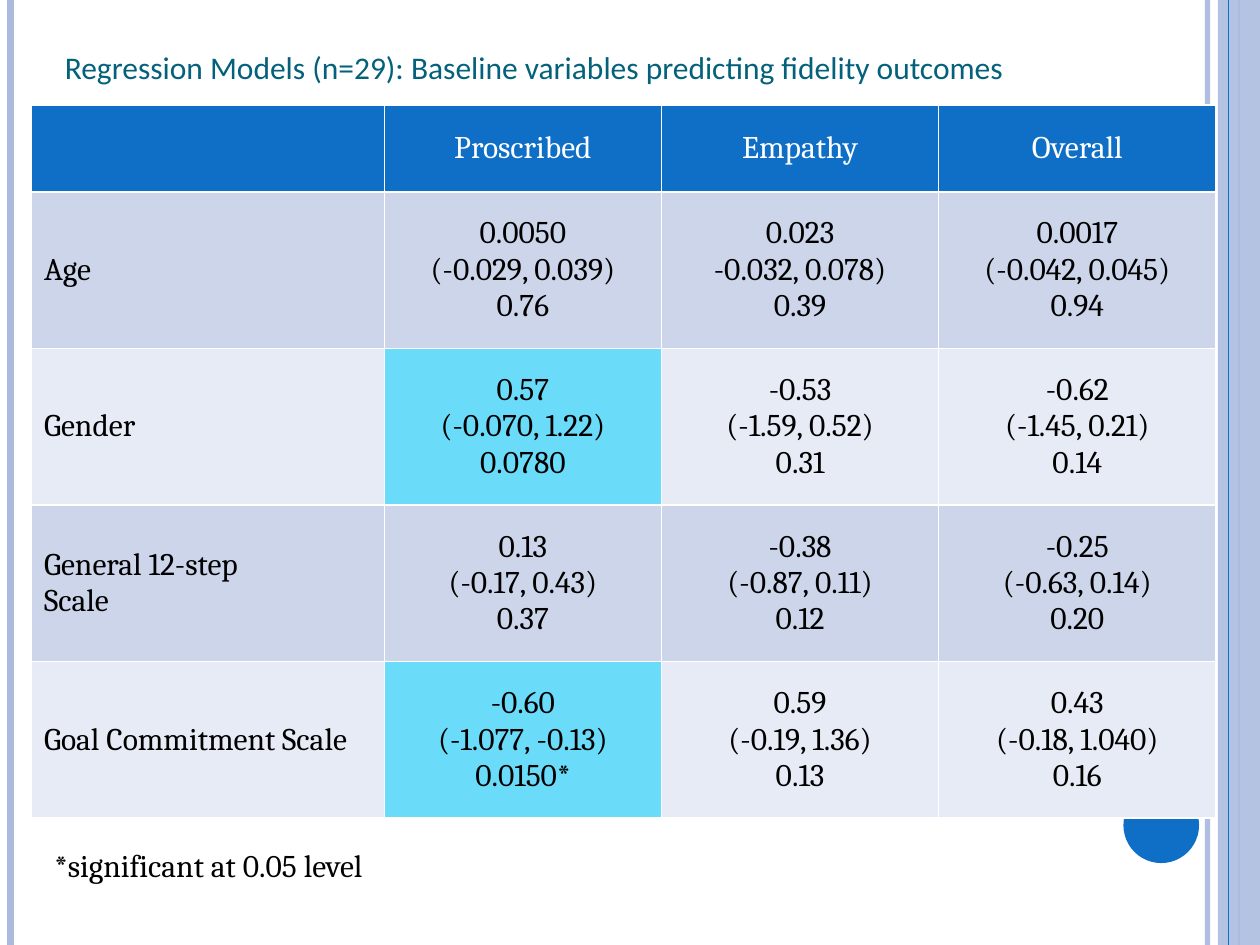
from lxml import etree
from pptx import Presentation
from pptx.dml.color import RGBColor
from pptx.enum.shapes import MSO_CONNECTOR, MSO_SHAPE
from pptx.enum.text import MSO_ANCHOR, PP_ALIGN
from pptx.oxml.ns import qn
from pptx.util import Pt

STRAIGHT = MSO_CONNECTOR.STRAIGHT
RECT, OVAL = MSO_SHAPE.RECTANGLE, MSO_SHAPE.OVAL
MIDDLE = MSO_ANCHOR.MIDDLE
LEFT, CENTER = PP_ALIGN.LEFT, PP_ALIGN.CENTER

BLUE, PALE, WHITE, BLACK, TEAL = "0F6FC6", "ABBBDF", "FFFFFF", "000000", "04617B"
BANDS, HIGHLIGHT = ("CCD5EA", "E7EBF5"), "6BDBFA"
WIDTH, HEIGHT = 720, 540


def paint(fill, color, alpha=100):
    fill.solid()
    fill.fore_color.rgb = RGBColor.from_string(color)
    if alpha < 100:
        clr = fill._xPr.find(".//" + qn("a:srgbClr"))
        etree.SubElement(clr, qn("a:alpha")).set("val", str(alpha * 1000))


def write(tf, lines, color, font="Cambria", align=LEFT):
    for i, line in enumerate(lines):
        p = tf.paragraphs[0] if i == 0 else tf.add_paragraph()
        p.alignment = align
        r = p.add_run()
        r.text = line
        r.font.name, r.font.size, r.font.bold = font, Pt(18), False
        paint(r.font.fill, color)


prs = Presentation()
prs.slide_width, prs.slide_height = Pt(WIDTH), Pt(HEIGHT)
s = prs.slides.add_slide(prs.slide_layouts[6])

# Side band and the circle at the lower right
for kind, box, color, alpha in [
    (RECT, (696, 0, 24, HEIGHT), PALE, 87),
    (OVAL, (642, 450, 43.2, 43.2), BLUE, 100),
]:
    sp = s.shapes.add_shape(kind, *map(Pt, box))
    sp.shadow.inherit = False
    paint(sp.fill, color, alpha)
    sp.line.fill.background()

# Vertical rules: x, colour, width, opacity
for x, color, width, alpha in [
    (690, PALE, 3, 93),
    (6, PALE, 4.5, 100),
    (708, PALE, 0.75, 100),
    (702, BLUE, 0.75, 100),
]:
    line = s.shapes.add_connector(STRAIGHT, Pt(x), 0, Pt(x), Pt(HEIGHT))
    line.line.width = Pt(width)
    paint(line.line.fill, color, alpha)
    etree.SubElement(line._element.spPr, qn("a:effectLst"))

# Title and footnote
for box, text, color, font in [
    ((30, 24, 648, 29), "Regression Models (n=29): Baseline variables predicting fidelity outcomes",
     TEAL, "Calibri"),
    ((24, 480, 282, 30), "*significant at 0.05 level", BLACK, "Cambria"),
]:
    tf = s.shapes.add_textbox(*map(Pt, box)).text_frame
    tf.word_wrap = True
    write(tf, [text], color, font)

# Regression table: each cell is a list of lines
header = [[], ["Proscribed"], ["Empathy"], ["Overall"]]
models = [
    [["Age"],
     ["0.0050", "(-0.029, 0.039)", "0.76"],
     ["0.023", "-0.032, 0.078)", "0.39"],
     ["0.0017", "(-0.042, 0.045)", "0.94"]],
    [["Gender"],
     ["0.57", "(-0.070, 1.22)", "0.0780"],
     ["-0.53", "(-1.59, 0.52)", "0.31"],
     ["-0.62", "(-1.45, 0.21)", "0.14"]],
    [["General 12-step", "Scale"],
     ["0.13", "(-0.17, 0.43)", "0.37"],
     ["-0.38", "(-0.87, 0.11)", "0.12"],
     ["-0.25", "(-0.63, 0.14)", "0.20"]],
    [["Goal Commitment Scale"],
     ["-0.60", "(-1.077, -0.13)", "0.0150*"],
     ["0.59", "(-0.19, 1.36)", "0.13"],
     ["0.43", "(-0.18, 1.040)", "0.16"]],
]
highlighted = {(2, 1), (4, 1)}
col_widths = [201.6] + [158.4] * 3
row_heights = [49.6] + [89.5] * 4

table = s.shapes.add_table(5, 4, Pt(18), Pt(60), Pt(sum(col_widths)), Pt(sum(row_heights))).table
for col, width in zip(table.columns, col_widths):
    col.width = Pt(width)
for row, height in zip(table.rows, row_heights):
    row.height = Pt(height)

for i, cells in enumerate([header] + models):
    for j, lines in enumerate(cells):
        cell = table.cell(i, j)
        cell.vertical_anchor = MIDDLE
        if i == 0:
            color = BLUE
        elif (i, j) in highlighted:
            color = HIGHLIGHT
        else:
            color = BANDS[(i - 1) % 2]
        paint(cell.fill, color)
        write(cell.text_frame, lines, BLACK if i else WHITE, align=CENTER if j else LEFT)

prs.save("out.pptx")
